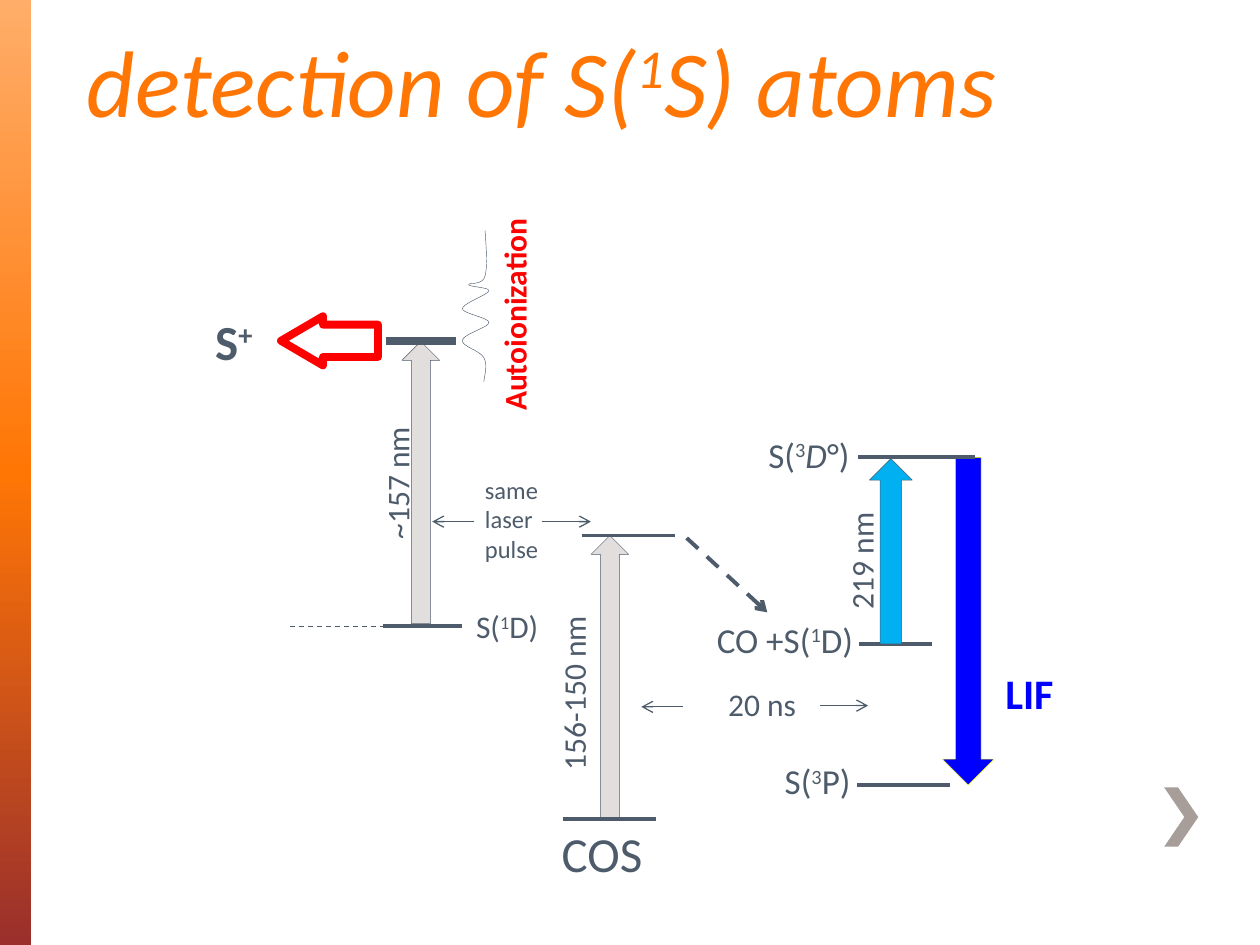
from copy import deepcopy

from lxml import etree
from pptx import Presentation
from pptx import util as u
from pptx.dml import color
from pptx.enum import dml, shapes, text
from pptx.oxml import ns

INK, RED, BLUE, ORANGE, GREY = "4D5B6B", "FF0000", "0000FF", "FF7605", "E2DEDD"
SUP = {"base": 30}


def rgb(value):
    return color.RGBColor.from_string(value)


def write(tf, runs, size, hex_color=INK, wrap=False, **font):
    frame = {"word_wrap": wrap, "auto_size": text.MSO_AUTO_SIZE.NONE,
             "vertical_anchor": text.MSO_ANCHOR.TOP}
    for name, value in frame.items():
        setattr(tf, name, value)
    p = tf.paragraphs[0]
    p.alignment = text.PP_ALIGN.LEFT
    for words, extra in runs:
        r = p.add_run()
        r.text = words
        fmt = {"name": "Calibri", "size": u.Pt(size), **font, **extra}
        base = fmt.pop("base", None)
        for name, value in fmt.items():
            setattr(r.font, name, value)
        r.font.color.rgb = rgb(hex_color)
        if base:
            r.font._element.set("baseline", str(base * 1000))


def label(s, x, y, w, h, runs, size, rotation=0, **fmt):
    sp = s.shapes.add_textbox(*map(u.Inches, (x, y, w, h)))
    sp.rotation = rotation
    write(sp.text_frame, runs, size, **fmt)


def term(before, sup, after):
    return [(before, {}), (sup, SUP), (after, {})]


def line(s, x1, y1, x2, y2, width=0.75, dash=False, arrow=False):
    cx = s.shapes.add_connector(shapes.MSO_CONNECTOR.STRAIGHT,
                                *map(u.Inches, (x1, y1, x2, y2)))
    cx.line.color.rgb = rgb(INK)
    cx.line.width = u.Pt(width)
    if dash:
        cx.line.dash_style = dml.MSO_LINE.DASH
    if arrow:
        etree.SubElement(cx.line._get_or_add_ln(), ns.qn("a:tailEnd"), type="arrow")
    etree.SubElement(cx._element.spPr, ns.qn("a:effectLst"))


def level(s, x, y, w, width=2.25):
    line(s, x, y, x + w, y, width)


def paint(sp, fill=None, edge=None, width=0.25):
    sp.shadow.inherit = False
    if fill:
        sp.fill.solid()
        sp.fill.fore_color.rgb = rgb(fill)
    else:
        sp.fill.background()
    if edge:
        sp.line.color.rgb = rgb(edge)
        sp.line.width = u.Pt(width)
    else:
        sp.line.fill.background()


def block_arrow(s, x, y, w, h, fill, edge=INK, width=0.25, rotation=180, adj=(0.5, 0.5)):
    sp = s.shapes.add_shape(shapes.MSO_SHAPE.DOWN_ARROW, *map(u.Inches, (x, y, w, h)))
    sp.rotation = rotation
    for i, value in enumerate(adj):
        sp.adjustments[i] = value
    paint(sp, fill, edge, width)


def outline(s, x, y, points, close, **style):
    pts = [(u.Inches(x + dx), u.Inches(y + dy)) for dx, dy in points]
    fb = s.shapes.build_freeform(*pts[0])
    fb.add_line_segments(pts[1:], close=close)
    paint(fb.convert_to_shape(), **style)


def bezier(start, curves, steps=10):
    points = [start]
    for b, c, d in curves:
        a = points[-1]
        for i in range(1, steps + 1):
            t = i / steps
            weights = ((1 - t) ** 3, 3 * t * (1 - t) ** 2, 3 * t * t * (1 - t), t ** 3)
            points.append(tuple(sum(k * q[n] for k, q in zip(weights, (a, b, c, d)))
                                for n in (0, 1)))
    return points


def sidebar(s, x, y, w, h):
    sp = s.shapes.add_shape(shapes.MSO_SHAPE.RECTANGLE, *map(u.Inches, (x, y, w, h)))
    paint(sp)
    sp.fill.gradient()
    sp.fill.gradient_angle = 270
    stops = sp._element.spPr.find(".//" + ns.qn("a:gsLst"))
    stops.append(deepcopy(stops[-1]))
    for stop, (position, value) in zip(sp.fill.gradient_stops,
                                       ((0, "FFAD69"), (0.5, ORANGE), (1, "9A2F2C"))):
        stop.position = position
        stop.color.rgb = rgb(value)


def chevron(s, x, y, w, h):
    arm = 0.11
    points = [(arm, 0), (0, 0), (w - arm, h / 2), (0, h), (arm, h), (w, h / 2)]
    outline(s, x, y, points, True, fill="A79D99")


def title(s, x, y, w, h):
    sp = s.shapes.title
    for name, value in zip(("left", "top", "width", "height"), (x, y, w, h)):
        setattr(sp, name, u.Inches(value))
    write(sp.text_frame, term("detection of S(", "1", "S) atoms"), 54,
          hex_color=ORANGE, italic=True)


def fluorescence(s, x, y):
    level(s, x + 1.21, y + 2.6, 0.74)
    level(s, x + 1.23, y + 1.48, 0.58)
    block_arrow(s, x + 1.31, y + 0.01, 0.34, 1.47, "00B0F0")
    block_arrow(s, x + 1.89, y, 0.41, 2.6, BLUE, edge="FFFF00", rotation=0)
    level(s, x + 1.22, y, 0.93)
    label(s, x + 0.54, y + 2.35, 0.74, 0.44, term("S(", "3", "P)"), 20)
    label(s, x, y + 1.23, 1.31, 0.44, term("CO +S(", "1", "D)"), 20)
    label(s, x + 0.41, y - 0.24, 1.18, 0.44,
          [("S(", {}), ("3", SUP), ("D", {"italic": True}), ("°)", {})], 20, wrap=True)
    label(s, x + 2.29, y + 1.62, 0.82, 0.63, [("LIF", {})], 24, hex_color=BLUE, bold=True)
    label(s, x + 0.72, y + 0.42, 1.21, 0.56, [("219 nm", {})], 18, rotation=270)


def dissociation(s, x, y):
    block_arrow(s, x + 0.22, y, 0.3, 2.24, GREY)
    level(s, x, y + 2.25, 0.74)
    level(s, x + 0.15, y, 0.74)
    label(s, x - 0.11, y + 2.24, 0.85, 0.57, [("COS", {})], 28)
    label(s, x - 0.73, y + 0.79, 1.78, 0.56, [("156-150 nm", {})], 18, rotation=270)
    line(s, x + 0.98, y + 0.02, x + 1.62, y + 0.61, 2.25, dash=True, arrow=True)


def resonance(s, x, y):
    curves = [((0.19, 0.15), (0.2, 0.29), (0.18, 0.36)),
              ((0.16, 0.44), (0.05, 0.41), (0.05, 0.43)),
              ((0.06, 0.45), (0.22, 0.45), (0.21, 0.48)),
              ((0.2, 0.51), (0, 0.58), (0, 0.62)),
              ((0, 0.66), (0.21, 0.69), (0.21, 0.73)),
              ((0.21, 0.77), (0.01, 0.82), (0, 0.87)),
              ((-0.01, 0.92), (0.14, 0.95), (0.17, 1.01)),
              ((0.2, 1.06), (0.18, 1.13), (0.17, 1.2))]
    outline(s, x, y, bezier((0.18, 0), curves), False, edge=INK)


def ionization(s, x, y):
    block_arrow(s, x + 1.58, y + 0.88, 0.3, 2.24, GREY)
    line(s, x + 0.69, y + 3.14, x + 1.45, y + 3.14, dash=True)
    block_arrow(s, x + 0.81, y + 0.49, 0.39, 0.77, None, RED, 4.5, 90, (0.657, 0.853))
    label(s, x, y + 0.59, 0.52, 0.57, [("S", {}), ("+", SUP)], 28, bold=True)
    level(s, x + 1.43, y + 3.14, 0.63)
    level(s, x + 1.45, y + 0.88, 0.56, 4.5)
    resonance(s, x + 2.06, y)
    label(s, x + 1.6, y + 0.46, 1.74, 0.4, [("Autoionization", {})], 18, rotation=270,
          hex_color=RED, bold=True)
    label(s, x + 0.99, y + 1.8, 1.1, 0.4, [("~157 nm", {})], 18, rotation=270)
    label(s, x + 2.07, y + 2.94, 0.71, 0.4, term("S(", "1", "D)"), 18)


def timing(s, x, y, w, h, words, size, left, right, wrap=False):
    label(s, x, y, w, h, [(words, {})], size, wrap=wrap)
    for x1, x2, dy in (left, right):
        line(s, x + x1, y + dy, x + x2, y + dy, arrow=True)


def main():
    prs = Presentation()
    prs.slide_width, prs.slide_height = u.Inches(10), u.Inches(7.5)
    s = prs.slides.add_slide(prs.slide_layouts[5])
    sidebar(s, 0, 0, 0.25, 7.5)
    chevron(s, 9.24, 6.25, 0.27, 0.47)
    title(s, 0.59, 0.13, 7.61, 1.01)
    fluorescence(s, 5.59, 3.63)
    dissociation(s, 4.47, 4.25)
    ionization(s, 1.61, 1.83)
    timing(s, 5.68, 5.39, 0.75, 0.4, "20 ns", 18, (-0.26, -0.59, 0.22), (0.83, 1.21, 0.21))
    timing(s, 3.75, 3.72, 1.02, 0.81, "same laser pulse", 14,
           (0.01, -0.32, 0.42), (0.55, 0.94, 0.42), wrap=True)
    prs.save("out.pptx")


if __name__ == "__main__":
    main()
